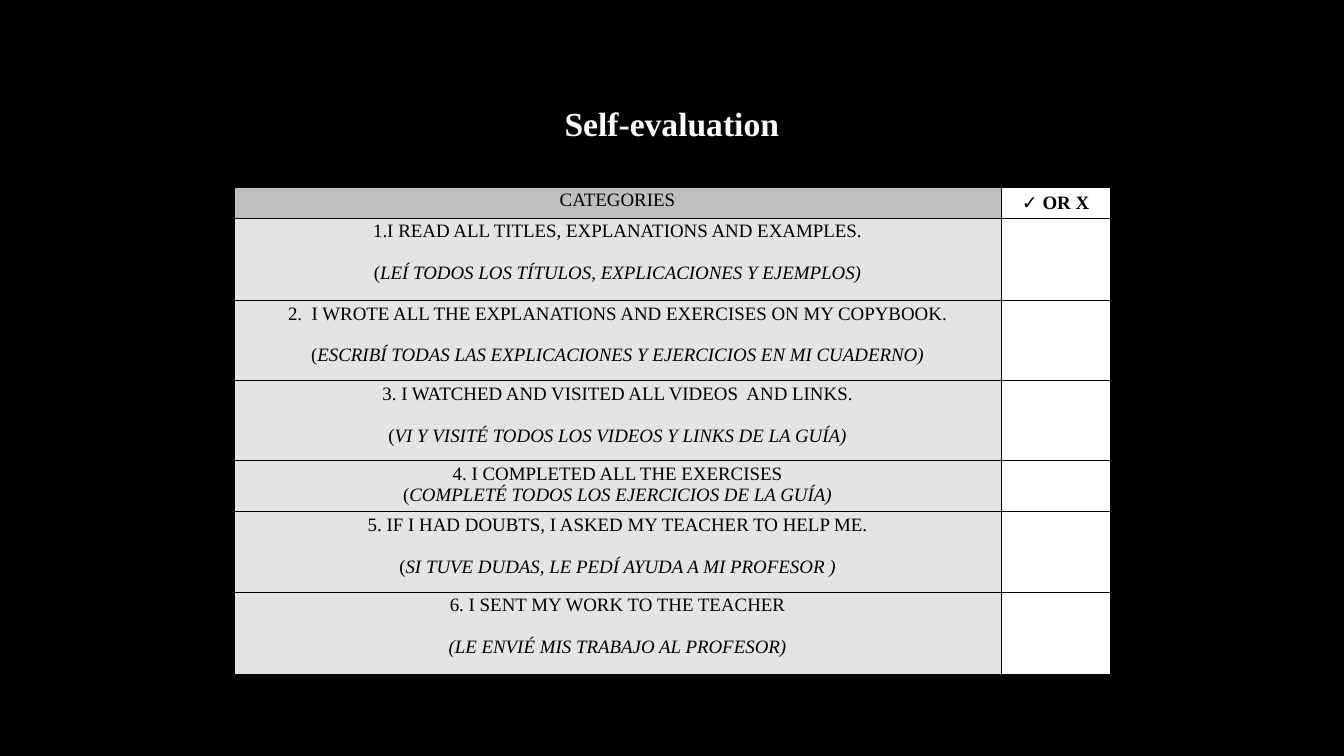
"""Build the self-evaluation slide with its checklist table."""
from lxml import etree
from pptx import Presentation
from pptx import util as u
from pptx.dml.color import RGBColor
from pptx.enum import text
from pptx.oxml import ns

HUES = {"black": "000000", "white": "FFFFFF", "head": "BEC0BF", "row": "E3E4E4"}
SERIF = "Times New Roman"
PAD = u.Cm(0.14)
EDGES = ("margin_left", "margin_right", "margin_top", "margin_bottom")

ITEMS = [
    ("I READ ALL TITLES, EXPLANATIONS AND EXAMPLES.",
     "(", "LEÍ TODOS LOS TÍTULOS, EXPLICACIONES Y EJEMPLOS)", 4.14),
    ("2.  I WROTE ALL THE EXPLANATIONS AND EXERCISES ON MY COPYBOOK.",
     "(", "ESCRIBÍ TODAS LAS EXPLICACIONES Y EJERCICIOS EN MI CUADERNO)", 4.04),
    ("3. I WATCHED AND VISITED ALL VIDEOS  AND LINKS.",
     "(", "VI Y VISITÉ TODOS LOS VIDEOS Y LINKS DE LA GUÍA)", 4.04),
    ("4. I COMPLETED ALL THE EXERCISES",
     "(", "COMPLETÉ TODOS LOS EJERCICIOS DE LA GUÍA)", 2.57),
    ("5. IF I HAD DOUBTS, I ASKED MY TEACHER TO HELP ME.",
     "(", "SI TUVE DUDAS, LE PEDÍ AYUDA A MI PROFESOR )", 4.04),
    ("6. I SENT MY WORK TO THE TEACHER",
     "", "(LE ENVIÉ MIS TRABAJO AL PROFESOR)", 4.14),
]


def write(para, words, hue="black", **form):
    para.alignment = text.PP_ALIGN.CENTER
    run = para.add_run()
    run.text = words
    run.font.color.rgb = RGBColor.from_string(HUES[hue])
    for key, value in {"name": SERIF, "size": u.Pt(27), **form}.items():
        setattr(run.font, key, value)


def paint(cell, hue):
    for edge in EDGES:
        setattr(cell, edge, PAD)
    props = cell._tc.get_or_add_tcPr()
    for tag in ("a:lnL", "a:lnR", "a:lnT", "a:lnB"):
        line = etree.SubElement(props, ns.qn(tag), w=str(u.Pt(1)))
        fill = etree.SubElement(line, ns.qn("a:solidFill"))
        etree.SubElement(fill, ns.qn("a:srgbClr"), val=HUES["black"])
    cell.fill.solid()
    cell.fill.fore_color.rgb = RGBColor.from_string(HUES[hue])


deck = Presentation()
deck.slide_width, deck.slide_height = u.Cm(67.74), u.Cm(38.1)
slide = deck.slides.add_slide(deck.slide_layouts[6])
slide.background.fill.solid()
slide.background.fill.fore_color.rgb = RGBColor.from_string(HUES["black"])

tall = [1.3] + [item[3] for item in ITEMS]
wide = [38.66, 5.51]
frame = slide.shapes.add_table(len(tall), len(wide), u.Cm(11.79), u.Cm(9.42),
                               u.Cm(sum(wide)), u.Cm(sum(tall)))
table = frame.table
table.horz_banding = False
for col, width in zip(table.columns, wide):
    col.width = u.Cm(width)
for row, height in zip(table.rows, tall):
    row.height = u.Cm(height)
    for cell, hue in zip(row.cells, ("row", "white")):
        paint(cell, hue)
table.cell(0, 0).fill.fore_color.rgb = RGBColor.from_string(HUES["head"])

write(table.cell(0, 0).text_frame.paragraphs[0], "CATEGORIES", bold=False)
mark = table.cell(0, 1).text_frame.paragraphs[0]
write(mark, "✓", name="Open Sans", bold=True)
write(mark, " OR X", bold=True)

for num, (claim, lead, gloss, height) in enumerate(ITEMS, 1):
    body = table.cell(num, 0).text_frame
    first = body.paragraphs[0]
    write(first, claim, bold=False)
    if height > 3:
        first.space_after = u.Pt(30)
    if num == 1:
        props = first._p.get_or_add_pPr()
        props.set("marL", str(u.Cm(0.08)))
        props.set("indent", str(-u.Cm(0.08)))
        tint = etree.SubElement(props, ns.qn("a:buClr"))
        etree.SubElement(tint, ns.qn("a:srgbClr"), val=HUES["black"])
        etree.SubElement(props, ns.qn("a:buFont"), typeface=SERIF)
        etree.SubElement(props, ns.qn("a:buAutoNum"), type="arabicPeriod")
    last = body.add_paragraph()
    if lead:
        write(last, lead, bold=False)
    write(last, gloss, bold=False, italic=True)

title = slide.shapes.add_textbox(u.Cm(25.43), u.Cm(3.1), u.Cm(16.87), u.Cm(2.16))
body = title.text_frame
form = {"word_wrap": True, "vertical_anchor": text.MSO_ANCHOR.MIDDLE,
        "auto_size": text.MSO_AUTO_SIZE.SHAPE_TO_FIT_TEXT,
        **dict.fromkeys(EDGES, PAD)}
for key, value in form.items():
    setattr(body, key, value)
body.paragraphs[0].line_spacing = 3.0
write(body.paragraphs[0], "Self-evaluation", "white", size=u.Pt(48), bold=True)

deck.save("out.pptx")
